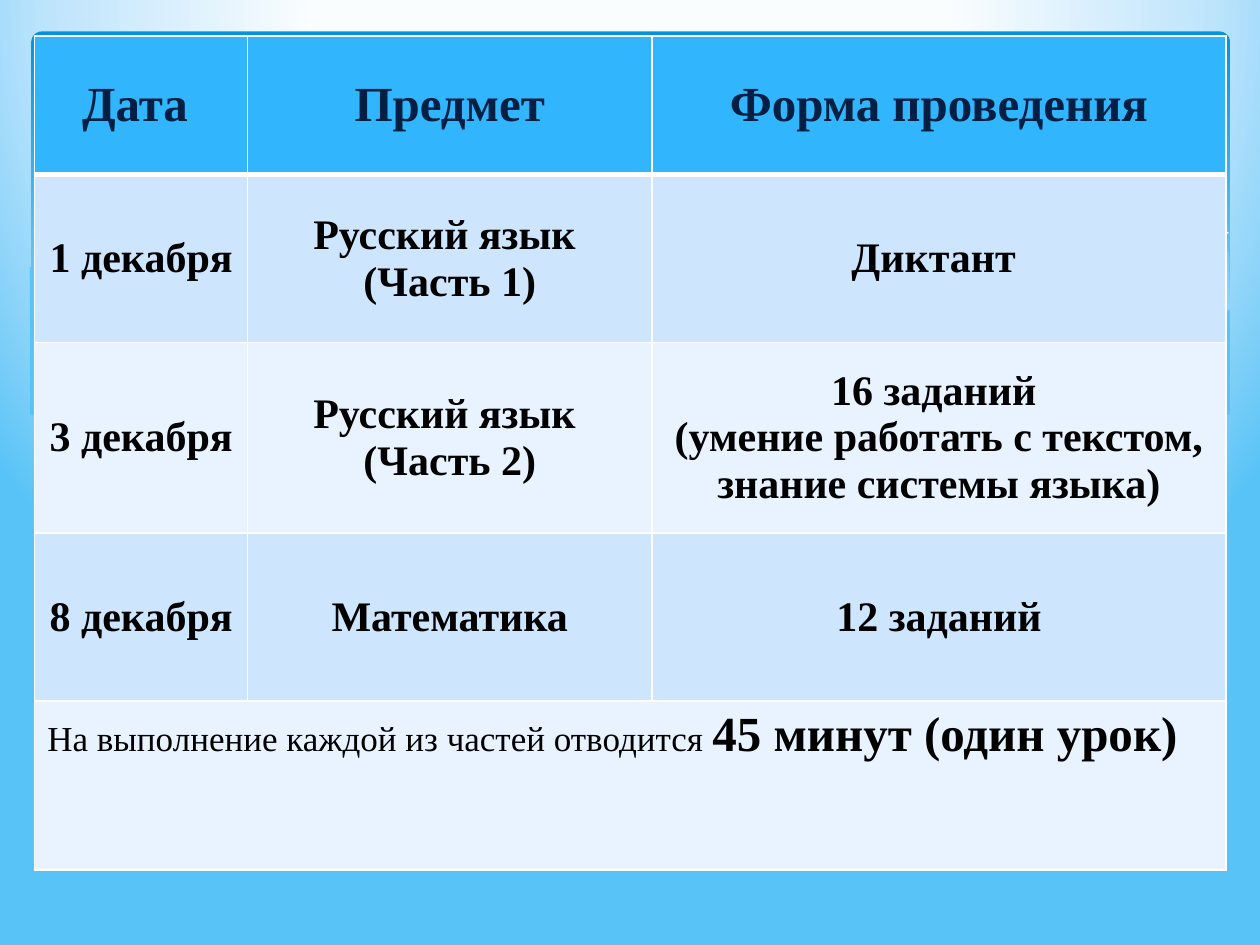
import lxml.etree
import pptx
import pptx.dml.color
import pptx.enum.shapes
import pptx.enum.text
import pptx.oxml.ns
import pptx.util

Pt = pptx.util.Pt
qn = pptx.oxml.ns.qn
MIDDLE = pptx.enum.text.MSO_ANCHOR.MIDDLE
CENTER = pptx.enum.text.PP_ALIGN.CENTER

SKY_STOPS = [(40, "FAFDFE"), (74, "BEE4FC"), (100, "58C3F6")]
BANNER_STOPS = [(0, "0293E0"), (90, "83D3FE")]

HEADER = {"size": Pt(28), "bold": True, "color": "041F44"}
BODY = {"size": Pt(24), "bold": True, "color": "000000"}
NOTE = {"size": Pt(20), "bold": False, "color": "000000"}
NOTE_STRONG = {"size": Pt(28), "bold": True, "color": "000000"}

COLUMN_WIDTHS = [121.7, 231, 328]
ROW_HEIGHTS = [79, 96.2, 108.6, 96.2, 96.5]
ROW_FILLS = ["31B6FD", "CEE5FE", "E8F3FF", "CEE5FE", "E8F3FF"]
SCHEDULE = [
    ["Дата ", "Предмет", "Форма проведения"],
    ["1 декабря", "Русский язык \n(Часть 1)", "Диктант "],
    ["3 декабря", "Русский язык \n(Часть 2)",
     "16 заданий \n(умение работать с текстом, знание системы языка)"],
    ["8 декабря", "Математика", "12 заданий"],
]

RIGHT_WAVE = [
    (702, 144), (662, 151), (620, 161), (561, 174), (508, 185), (476, 191),
    (518, 195), (562, 199), (601, 200), (640, 199), (673, 194), (703, 178),
]
MIDDLE_WAVE = [
    (643, 197), (581, 187), (508, 173), (453, 160), (400, 148), (352, 140),
    (302, 134), (248, 133), (206, 138), (246, 143), (307, 156), (382, 173),
    (433, 184), (489, 194), (548, 199), (596, 200), (637, 197),
]
MIDDLE_CREST = [
    (222, 140), (261, 136), (312, 135), (367, 138), (419, 144), (479, 153),
    (547, 168), (598, 181), (653, 196),
]
RIGHT_CREST = [
    (441, 185), (500, 169), (559, 156), (623, 143), (675, 135), (702, 133),
]
FRONT_WAVE = [
    (703, 177), (670, 189), (630, 196), (583, 199), (523, 196), (467, 189),
    (399, 176), (322, 158), (263, 145), (210, 137), (152, 132), (105, 133),
    (68, 138), (37, 145), (17, 153), (17, 237), (703, 237),
]


def color(hex_value):
    return pptx.dml.color.RGBColor.from_string(hex_value)


def apply_gradient(parent, stops, direction):
    """Swap the solid fill inside parent for a gradient; direction is XML."""
    stop_xml = "".join(
        f'<a:gs pos="{position * 1000}"><a:srgbClr val="{value}"/></a:gs>'
        for position, value in stops
    )
    gradient = lxml.etree.fromstring(
        f'<a:gradFill {pptx.oxml.ns.nsdecls("a")} rotWithShape="1">'
        f"<a:gsLst>{stop_xml}</a:gsLst>{direction}</a:gradFill>"
    )
    solid = parent.find(".//" + qn("a:solidFill"))
    solid.getparent().replace(solid, gradient)


class SlideBuilder:
    font_name = "Times New Roman"
    border = "FFFFFF"
    linear = '<a:lin ang="5400000" scaled="0"/>'
    radial = ('<a:path path="circle"><a:fillToRect l="20000" t="-40000" '
              'r="20000" b="140000"/></a:path>')

    def __init__(self, slide):
        self.slide = slide

    def background(self, stops):
        fill = self.slide.background.fill
        fill.solid()
        fill.fore_color.rgb = color(stops[-1][1])
        apply_gradient(self.slide.element.find(".//" + qn("p:bg")), stops, self.radial)

    def plain(self, shape, fill):
        shape.shadow.inherit = False
        shape.line.fill.background()
        shape.fill.solid()
        shape.fill.fore_color.rgb = color(fill)

    def banner(self, left, top, width, height, stops):
        shape = self.slide.shapes.add_shape(
            pptx.enum.shapes.MSO_SHAPE.ROUNDED_RECTANGLE,
            Pt(left), Pt(top), Pt(width), Pt(height))
        shape.adjustments[0] = 0.03
        self.plain(shape, stops[0][1])
        apply_gradient(shape.element, stops, self.linear)

    def outline(self, points, close):
        start, *rest = [(Pt(x), Pt(y)) for x, y in points]
        builder = self.slide.shapes.build_freeform(*start)
        builder.add_line_segments(rest, close=close)
        return builder.convert_to_shape()

    def wave(self, points, fill="C6E7FC", opacity=100, stops=None):
        shape = self.outline(points, True)
        self.plain(shape, fill)
        if stops:
            apply_gradient(shape.element, stops, self.radial)
        else:
            value = shape.element.find(".//" + qn("a:srgbClr"))
            lxml.etree.SubElement(value, qn("a:alpha"), val=str(opacity * 1000))

    def crest(self, points):
        shape = self.outline(points, False)
        shape.shadow.inherit = False
        shape.fill.background()
        shape.line.color.rgb = color(self.border)
        shape.line.width = Pt(0)

    def run(self, paragraph, text, style):
        run = paragraph.add_run()
        run.text = text
        for name, value in {"name": self.font_name, **style}.items():
            if name == "color":
                run.font.color.rgb = color(value)
            else:
                setattr(run.font, name, value)

    def text(self, cell, text, style):
        cell.vertical_anchor = MIDDLE
        for index, line in enumerate(text.split("\n")):
            frame = cell.text_frame
            paragraph = frame.add_paragraph() if index else frame.paragraphs[0]
            paragraph.alignment = CENTER
            self.run(paragraph, line, style)

    def cell_style(self, cell, fill, top, bottom):
        """Draw the borders, then the fill, in the order the schema requires."""
        properties = cell._tc.get_or_add_tcPr()
        for side, width in {"L": 1, "R": 1, "T": top, "B": bottom}.items():
            line = lxml.etree.SubElement(properties, qn("a:ln" + side), w=str(Pt(width)))
            solid = lxml.etree.SubElement(line, qn("a:solidFill"))
            lxml.etree.SubElement(solid, qn("a:srgbClr"), val=self.border)
        cell.fill.solid()
        cell.fill.fore_color.rgb = color(fill)

    def table(self, left, top, widths, heights, fills):
        table = self.slide.shapes.add_table(
            len(heights), len(widths), Pt(left), Pt(top),
            Pt(sum(widths)), Pt(sum(heights))).table
        for column, width in zip(table.columns, widths):
            column.width = Pt(width)
        for index, (row, height) in enumerate(zip(table.rows, heights)):
            row.height = Pt(height)
            for cell in row.cells:
                self.cell_style(cell, fills[index], 3 if index == 1 else 1,
                                3 if index == 0 else 1)
        return table


def main():
    presentation = pptx.Presentation()
    presentation.slide_width = Pt(720)
    presentation.slide_height = Pt(540)
    builder = SlideBuilder(presentation.slides.add_slide(presentation.slide_layouts[6]))

    builder.background(SKY_STOPS)
    builder.banner(18, 18, 684.7, 194.4, BANNER_STOPS)
    builder.wave(RIGHT_WAVE, opacity=29)
    builder.wave(MIDDLE_WAVE, opacity=40)
    builder.crest(MIDDLE_CREST)
    builder.crest(RIGHT_CREST)
    builder.wave(FRONT_WAVE, stops=SKY_STOPS)

    table = builder.table(19.8, 20.7, COLUMN_WIDTHS, ROW_HEIGHTS, ROW_FILLS)
    for row, texts in enumerate(SCHEDULE):
        for column, text in enumerate(texts):
            builder.text(table.cell(row, column), text, BODY if row else HEADER)

    note = table.cell(len(SCHEDULE), 0)
    note.merge(table.cell(len(SCHEDULE), len(COLUMN_WIDTHS) - 1))
    paragraph = note.text_frame.paragraphs[0]
    builder.run(paragraph, "На выполнение каждой из частей отводится ", NOTE)
    builder.run(paragraph, "45 минут (один урок)", NOTE_STRONG)

    presentation.save("out.pptx")


if __name__ == "__main__":
    main()
